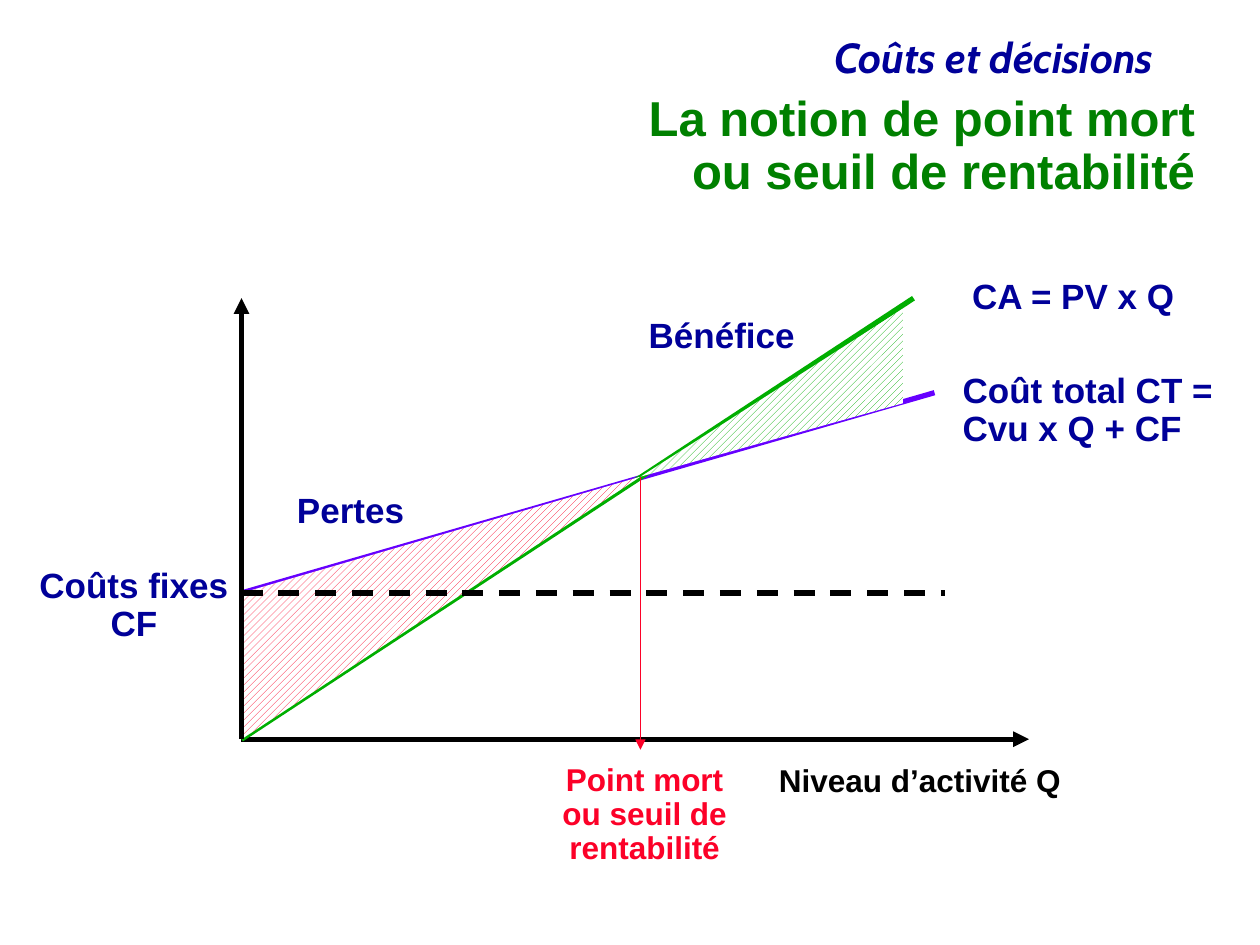
from lxml import etree
from pptx import Presentation
from pptx.dml.color import RGBColor
from pptx.enum.dml import MSO_LINE, MSO_PATTERN
from pptx.enum.shapes import MSO_CONNECTOR
from pptx.enum.text import MSO_ANCHOR, MSO_AUTO_SIZE, PP_ALIGN
from pptx.oxml.ns import qn
from pptx.util import Inches, Pt

LEFT, CENTER, RIGHT = PP_ALIGN.LEFT, PP_ALIGN.CENTER, PP_ALIGN.RIGHT
STRAIGHT = MSO_CONNECTOR.STRAIGHT
DASH = MSO_LINE.DASH
HATCH = MSO_PATTERN.WIDE_UPWARD_DIAGONAL

COLORS = {
    "navy": "000099",
    "title": "008000",
    "axis": "000000",
    "cost": "6600FF",
    "revenue": "00AE00",
    "threshold": "FC0128",
    "paper": "FFFFFF",
}

# The slide is a grid of 120 columns by 90 rows
COLUMNS, ROWS = 120, 90
WIDTH, HEIGHT = Inches(10), Inches(7.5)


def rgb(name):
    return RGBColor.from_string(COLORS[name])


def across(columns):
    return round(columns * WIDTH / COLUMNS)


def down(rows):
    return round(rows * HEIGHT / ROWS)


def add_label(page, box, paragraphs, size, color="navy", align=LEFT,
              font="Arial", italic=False, wrap=False):
    left, top, width, height = box
    label = page.shapes.add_textbox(across(left), down(top), across(width), down(height))
    frame = label.text_frame
    frame.word_wrap = wrap
    frame.auto_size = MSO_AUTO_SIZE.NONE if wrap else MSO_AUTO_SIZE.SHAPE_TO_FIT_TEXT
    for index, text in enumerate(paragraphs):
        para = frame.add_paragraph() if index else frame.paragraphs[0]
        para.text = text
        para.alignment = align
        para.line_spacing = 0.9
        for span in para.runs:
            span.font.name = font
            span.font.size = Pt(size)
            span.font.bold = True
            span.font.italic = italic
            span.font.color.rgb = rgb(color)
    return label


def add_heading(page, box):
    left, top, width, height = box
    add_label(page, (left, top, width - 4, 5.5), ["Coûts et décisions"], 24,
              align=RIGHT, font="Cabin", italic=True, wrap=True)
    title = add_label(page, (left + 5, top + 8, width - 5, height - 8),
                      ["La notion de point mort\nou seuil de rentabilité"], 28,
                      "title", RIGHT, wrap=True)
    title.text_frame.vertical_anchor = MSO_ANCHOR.MIDDLE


def add_chart_drawing(page, box):
    """Draw the break-even diagram; points count cells from the origin of the axes."""
    left, top, width, height = box

    def place(point):
        return across(left + point[0]), down(top + height - point[1])

    def add_line(start, end, color, weight=3, arrow=False, dash=None):
        connector = page.shapes.add_connector(STRAIGHT, *place(start), *place(end))
        connector.line.color.rgb = rgb(color)
        connector.line.width = Pt(weight)
        if dash:
            connector.line.dash_style = dash
        if arrow:
            etree.SubElement(connector.line._get_or_add_ln(), qn("a:tailEnd"), type="triangle")
        etree.SubElement(connector._element.spPr, qn("a:effectLst"))

    def add_zone(points, color):
        first, *others = [place(point) for point in points]
        builder = page.shapes.build_freeform(*first)
        builder.add_line_segments(others, close=True)
        zone = builder.convert_to_shape()
        zone.shadow.inherit = False
        zone.fill.patterned()
        zone.fill.pattern = HATCH
        zone.fill.fore_color.rgb = rgb(color)
        zone.fill.back_color.rgb = rgb("paper")
        zone.line.fill.background()

    origin = (0, 0)
    fixed_cost = (0, 13.92)
    break_even = (38, 25)

    # Activity axis, cost and revenue lines, threshold marker
    add_line(origin, (width, 0), "axis", arrow=True)
    add_line(fixed_cost, (66, 33), "cost")
    add_line(origin, (64, height), "revenue")
    add_line(break_even, (break_even[0], -1), "threshold", weight=1, arrow=True)

    # Loss and profit zones, with the value axis between them
    add_zone([origin, fixed_cost, break_even], "threshold")
    add_line(origin, (0, height), "axis", arrow=True)
    add_zone([break_even, (63, 41), (63, 32)], "revenue")

    # Fixed cost level
    add_line(fixed_cost, (67, fixed_cost[1]), "axis", dash=DASH)


def add_chart_labels(page, box):
    left, top, width, height = box
    base = top + height
    labels = [
        ((left + 29.3, base + 1.8, 18.2, 11), ["Point mort\nou seuil de", "rentabilité"],
         18, "threshold", CENTER),
        ((left + 4.1, top + 18, 12.6, 4.8), ["Pertes"], 20, "navy", LEFT),
        ((left + 37.6, top + 1.3, 16.3, 4.8), ["Bénéfice"], 20, "navy", LEFT),
        ((left + 68.4, top - 2.4, 21.8, 4.8), ["CA = PV x Q"], 20, "navy", LEFT),
        ((left + 67.5, top + 6.6, 26.4, 8.5), ["Coût total CT =\nCvu x Q + CF"],
         20, "navy", LEFT),
        ((left + 50, base + 1.9, 29.5, 4.4), ["Niveau d’activité Q"], 18, "axis", LEFT),
        ((left - 20.5, top + 25.1, 20.5, 8.5), ["Coûts fixes", "CF"], 20, "navy", CENTER),
    ]
    for label_box, paragraphs, size, color, align in labels:
        add_label(page, label_box, paragraphs, size, color, align)


def main():
    deck = Presentation()
    deck.slide_width, deck.slide_height = WIDTH, HEIGHT
    page = deck.slides.add_slide(deck.slide_layouts[6])
    chart_box = (23, 28.4, 75, 42)
    add_heading(page, (15, 3, 100, 14))
    add_chart_drawing(page, chart_box)
    add_chart_labels(page, chart_box)
    deck.save("out.pptx")


if __name__ == "__main__":
    main()
